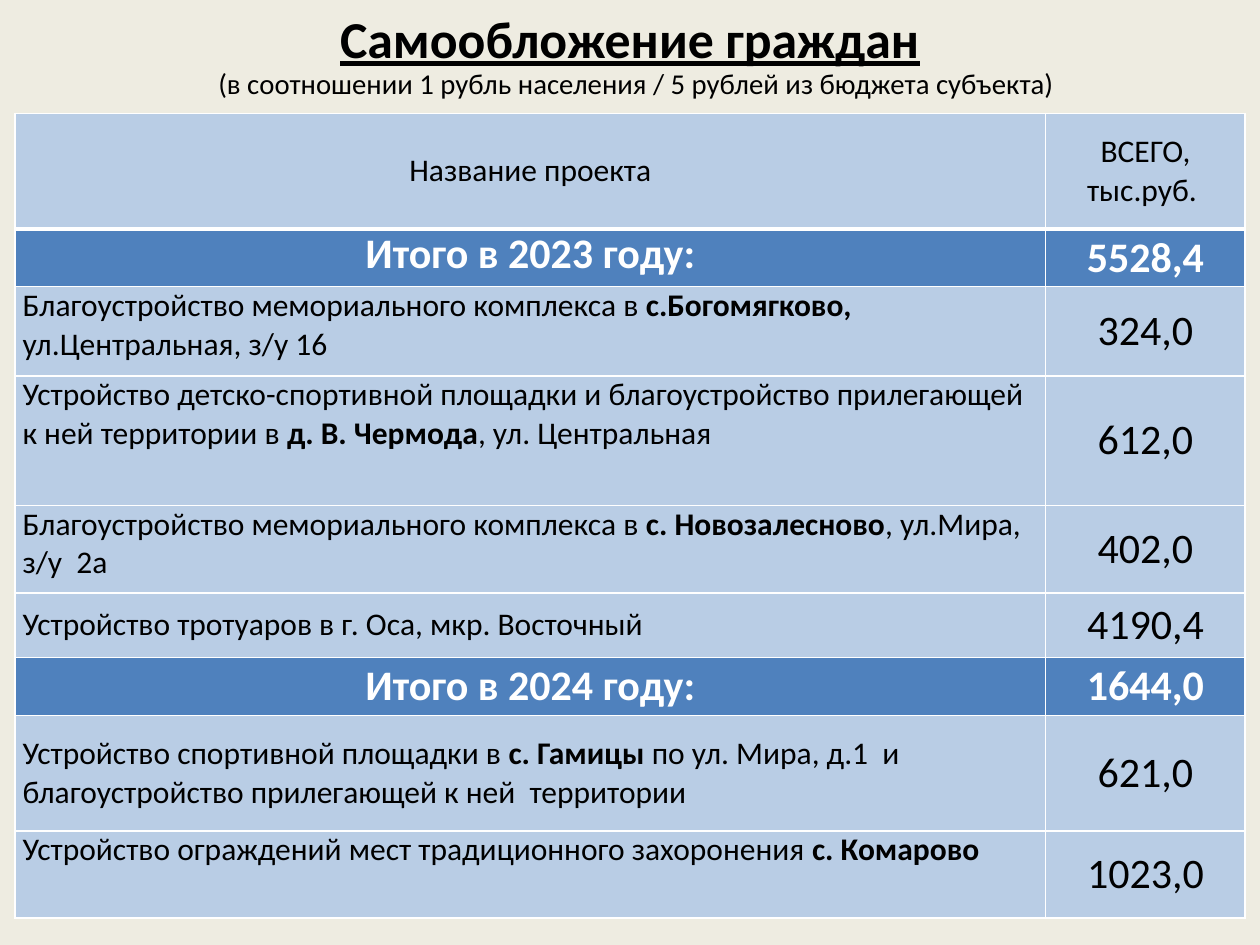
import pptx
import pptx.dml.color
import pptx.enum.text
import pptx.oxml
import pptx.oxml.ns
import pptx.util

Pt = pptx.util.Pt
RGBColor = pptx.dml.color.RGBColor
PP_ALIGN = pptx.enum.text.PP_ALIGN
MSO_ANCHOR = pptx.enum.text.MSO_ANCHOR

CREAM = RGBColor(0xEE, 0xEC, 0xE1)
PALE_BLUE = RGBColor(0xB9, 0xCD, 0xE5)
BLUE = RGBColor(0x4F, 0x81, 0xBD)
WHITE = RGBColor(0xFF, 0xFF, 0xFF)
BLACK = RGBColor(0, 0, 0)
FONT = "Calibri"

TOP, MIDDLE = MSO_ANCHOR.TOP, MSO_ANCHOR.MIDDLE
COLUMN_WIDTHS = [589, 114]
HEADER = ("Название проекта", "ВСЕГО, тыс.руб. ")
HEADER_HEIGHT = 66
TOTAL_HEIGHT = 33

TOTAL, PROJECT = "total", "project"
ROWS = [
    (TOTAL, TOTAL_HEIGHT, TOP, ["Итого в 2023 году:"], "5528,4"),
    (PROJECT, 51, TOP, ["Благоустройство мемориального комплекса в ",
                        "с.Богомягково, ", "ул.Центральная, з/у 16"], "324,0"),
    (PROJECT, 74, TOP, ["Устройство детско-спортивной площадки и благоустройство "
                        "прилегающей к ней территории в ",
                        "д. В. Чермода", ", ул. Центральная"], "612,0"),
    (PROJECT, 50, TOP, ["Благоустройство мемориального комплекса в ",
                        "с. Новозалесново", ", ул.Мира, з/у  2а"], "402,0"),
    (PROJECT, 37, MIDDLE, ["Устройство тротуаров в г. Оса, мкр. Восточный"], "4190,4"),
    (TOTAL, TOTAL_HEIGHT, MIDDLE, ["Итого в 2024 году:"], "1644,0"),
    (PROJECT, 66, MIDDLE, ["Устройство спортивной площадки в ", "с. Гамицы ",
                           "по ул. Мира, д.1  и благоустройство прилегающей к ней  территории"],
     "621,0"),
    (PROJECT, 50, TOP, ["Устройство ограждений мест традиционного захоронения ",
                        "с. Комарово"], "1023,0"),
]


def add_run(p, text, size, color=BLACK, bold=False, underline=False):
    r = p.add_run()
    r.text = text
    r.font.name = FONT
    r.font.size = Pt(size)
    r.font.color.rgb = color
    r.font.bold = bold
    r.font.underline = underline


def set_borders(cell, top=1, bottom=1):
    tc_pr = cell._tc.get_or_add_tcPr()
    for side, width in (("L", 1), ("R", 1), ("T", top), ("B", bottom)):
        tc_pr.append(pptx.oxml.parse_xml(
            f'<a:ln{side} {pptx.oxml.ns.nsdecls("a")} w="{Pt(width)}">'
            f'<a:solidFill><a:srgbClr val="{WHITE}"/></a:solidFill></a:ln{side}>'))


def fill_cell(cell, texts, size, fill, color=BLACK, bold=False,
              align=PP_ALIGN.CENTER, anchor=MIDDLE, top=1, bottom=1):
    set_borders(cell, top, bottom)
    cell.fill.solid()
    cell.fill.fore_color.rgb = fill
    cell.margin_left = cell.margin_right = Pt(4.3)
    cell.margin_top = cell.margin_bottom = 0
    cell.vertical_anchor = anchor
    p = cell.text_frame.paragraphs[0]
    p.alignment = align
    for i, text in enumerate(texts):
        add_run(p, text, size, color, bold or i == 1)


def place_title(s, left, top, width, height):
    sp = s.shapes.title
    sp.left, sp.top, sp.width, sp.height = Pt(left), Pt(top), Pt(width), Pt(height)
    tf = sp.text_frame
    tf.word_wrap = True
    tf.auto_size = pptx.enum.text.MSO_AUTO_SIZE.NONE
    tf.vertical_anchor = TOP
    heading, note = tf.paragraphs[0], tf.add_paragraph()
    for p in (heading, note):
        p.alignment = PP_ALIGN.CENTER
        p.line_spacing = Pt(20.6)
    add_run(heading, "Самообложение граждан", 29.6, bold=True, underline=True)
    add_run(note, " ", 29.6)
    add_run(note, "(в соотношении 1 рубль населения / 5 рублей из бюджета субъекта)", 16.4)


def place_projects_table(s, left, top, width, height):
    frame = s.shapes.add_table(len(ROWS) + 1, len(COLUMN_WIDTHS),
                               Pt(left), Pt(top), Pt(width), Pt(height))
    table = frame.table
    for column, column_width in zip(table.columns, COLUMN_WIDTHS):
        column.width = Pt(column_width)

    table.rows[0].height = Pt(HEADER_HEIGHT)
    for i, text in enumerate(HEADER):
        fill_cell(table.cell(0, i), [text], 18, PALE_BLUE, bottom=3)

    for i, (kind, row_height, anchor, texts, amount) in enumerate(ROWS, 1):
        table.rows[i].height = Pt(row_height)
        name, value = table.cell(i, 0), table.cell(i, 1)
        line = 3 if i == 1 else 1
        if kind == TOTAL:
            fill_cell(name, texts, 24, BLUE, WHITE, True, anchor=anchor, top=line)
            fill_cell(value, [amount], 24, BLUE, WHITE, True, top=line)
        else:
            fill_cell(name, texts, 18, PALE_BLUE, align=PP_ALIGN.LEFT, anchor=anchor)
            fill_cell(value, [amount], 24, PALE_BLUE)


def main():
    prs = pptx.Presentation()
    prs.slide_width, prs.slide_height = Pt(720), Pt(540)
    s = prs.slides.add_slide(prs.slide_layouts[5])
    s.background.fill.solid()
    s.background.fill.fore_color.rgb = CREAM
    table_height = HEADER_HEIGHT + sum(row[1] for row in ROWS)
    place_title(s, 8.6, 15, 703, 49.7)
    place_projects_table(s, 8.6, 64.8, sum(COLUMN_WIDTHS), table_height)
    prs.save("out.pptx")


if __name__ == "__main__":
    main()
